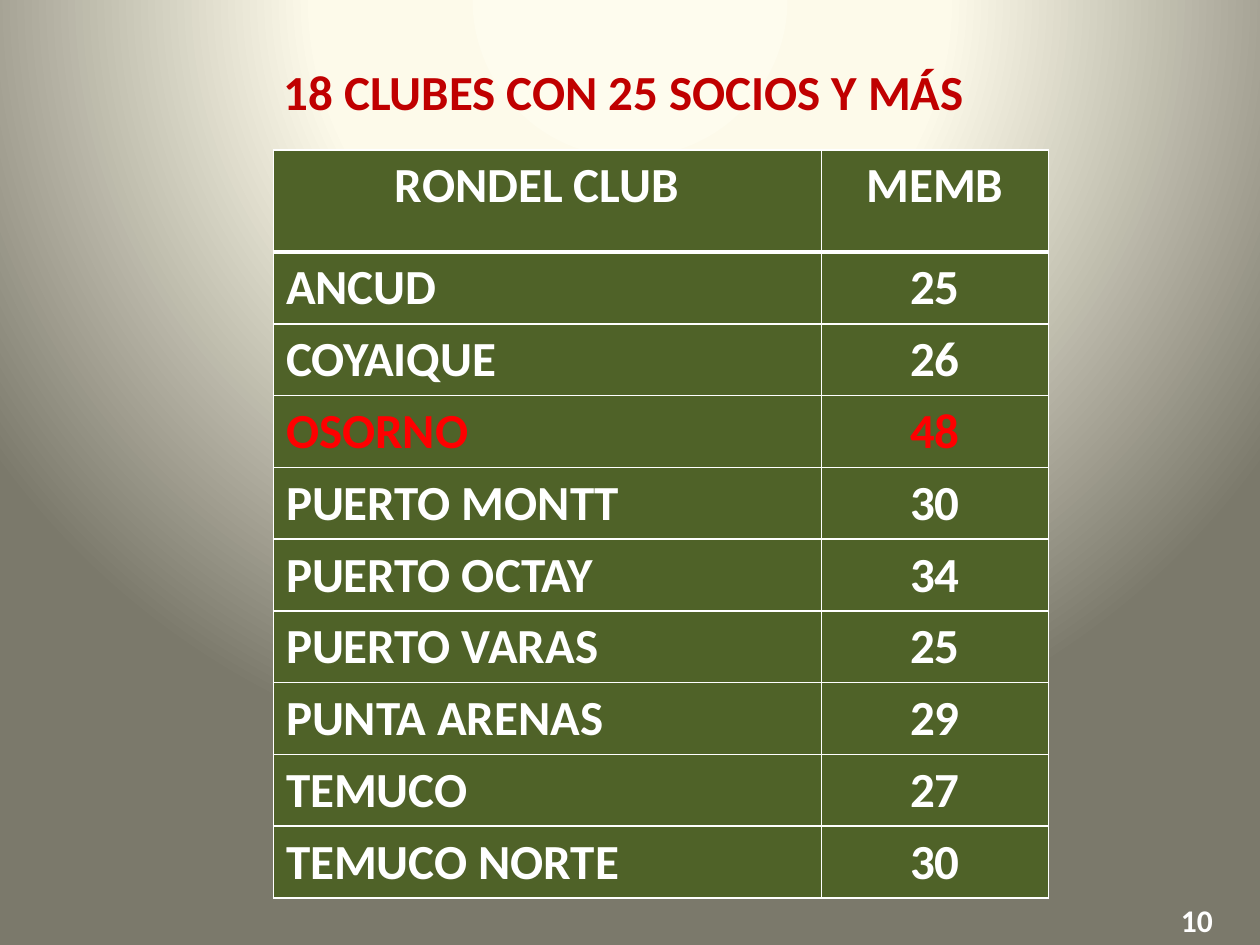
"""Builds the slide listing clubs with 25 members and more."""
import pptx
import pptx.dml.color
import pptx.enum.text
import pptx.oxml
import pptx.oxml.ns
import pptx.util

COLORS = {"white": "FFFFFF", "title": "C00000", "accent": "FF0000", "cell": "4F6228",
          "light": "FEFCEE", "cream": "FDFAEA", "dark": "7B796B"}
CENTER = pptx.enum.text.PP_ALIGN.CENTER
LEFT = pptx.enum.text.PP_ALIGN.LEFT
NS = pptx.oxml.ns.nsdecls("a")
CLUBS = [("ANCUD", 25), ("COYAIQUE", 26), ("OSORNO", 48), ("PUERTO MONTT", 30),
         ("PUERTO OCTAY", 34), ("PUERTO VARAS", 25), ("PUNTA ARENAS", 29),
         ("TEMUCO", 27), ("TEMUCO NORTE", 30)]
HIGHLIGHT = "OSORNO"


class Deck:
    """Holds the style and the current slide; lengths are shares of the slide."""

    def __init__(self, width, height, font):
        self.prs = pptx.Presentation()
        self.prs.slide_width = pptx.util.Inches(width)
        self.prs.slide_height = pptx.util.Inches(height)
        self.font = font
        self.s = self.prs.slides.add_slide(self.prs.slide_layouts[6])

    def x(self, share):
        return int(self.prs.slide_width * share)

    def y(self, share):
        return int(self.prs.slide_height * share)

    def background(self, stops):
        self.s.background.fill.gradient()
        grad = self.s.element.xpath(".//a:gradFill")[0]
        gs = "".join(f'<a:gs pos="{pos * 1000}"><a:srgbClr val="{COLORS[color]}"/></a:gs>'
                     for pos, color in stops)
        grad.getparent().replace(grad, pptx.oxml.parse_xml(
            f'<a:gradFill {NS}><a:gsLst>{gs}</a:gsLst><a:path path="circle">'
            '<a:fillToRect l="50000" t="-80000" r="50000" b="180000"/></a:path></a:gradFill>'))

    def set_text(self, tf, text, size, color, align):
        tf.text = text
        p = tf.paragraphs[0]
        p.alignment = align
        font = p.runs[0].font
        font.name, font.size, font.bold = self.font, pptx.util.Pt(size), True
        font.color.rgb = pptx.dml.color.RGBColor.from_string(COLORS[color])

    def text(self, text, left, top, width, height, size, color, wrap=True):
        sp = self.s.shapes.add_textbox(self.x(left), self.y(top), self.x(width), self.y(height))
        sp.text_frame.word_wrap = wrap
        self.set_text(sp.text_frame, text, size, color, CENTER)

    def border(self, cell, **widths):
        tcPr = cell._tc.get_or_add_tcPr()
        for i, side in enumerate("LRTB"):
            tcPr.insert(i, pptx.oxml.parse_xml(
                f'<a:ln{side} {NS} w="{pptx.util.Pt(widths.get(side, 1))}"><a:solidFill>'
                f'<a:srgbClr val="{COLORS["white"]}"/></a:solidFill></a:ln{side}>'))

    def table(self, rows, left, top, cols, heights, size):
        table = self.s.shapes.add_table(
            len(rows), len(cols), self.x(left), self.y(top),
            self.x(sum(cols)), self.y(sum(heights))).table
        for col, width in zip(table.columns, cols):
            col.width = self.x(width)
        for r, (row, height) in enumerate(zip(rows, heights)):
            table.rows[r].height = self.y(height)
            color = "accent" if row[0] == HIGHLIGHT else "white"
            for c, value in enumerate(row):
                cell = table.cell(r, c)
                cell.fill.solid()
                cell.fill.fore_color.rgb = pptx.dml.color.RGBColor.from_string(COLORS["cell"])
                self.set_text(cell.text_frame, str(value), size, color,
                              LEFT if r and c == 0 else CENTER)
                self.border(cell, T=3 if r == 1 else 1, B=3 if r == 0 else 1)
        return table


def main():
    deck = Deck(10, 7.5, "Calibri")
    deck.background([(0, "light"), (40, "cream"), (100, "dark")])
    deck.text("10", 0.9, 7.1 / 7.5, 0.1, 0.4 / 7.5, 18, "white")
    deck.text("18 CLUBES CON 25 SOCIOS Y MÁS", 0.21, 0.44 / 7.5, 0.57, 0.57 / 7.5,
              28, "title", wrap=False)
    table = deck.table([("RONDEL CLUB", "MEMB")] + CLUBS, 2.17 / 10, 1.19 / 7.5,
                       [4.35 / 10, 1.8 / 10],
                       [0.81 / 7.5] + [0.57 / 7.5] * len(CLUBS), 28)
    table.cell(0, 0).margin_right = pptx.util.Inches(0.27)
    deck.prs.save("out.pptx")


if __name__ == "__main__":
    main()
